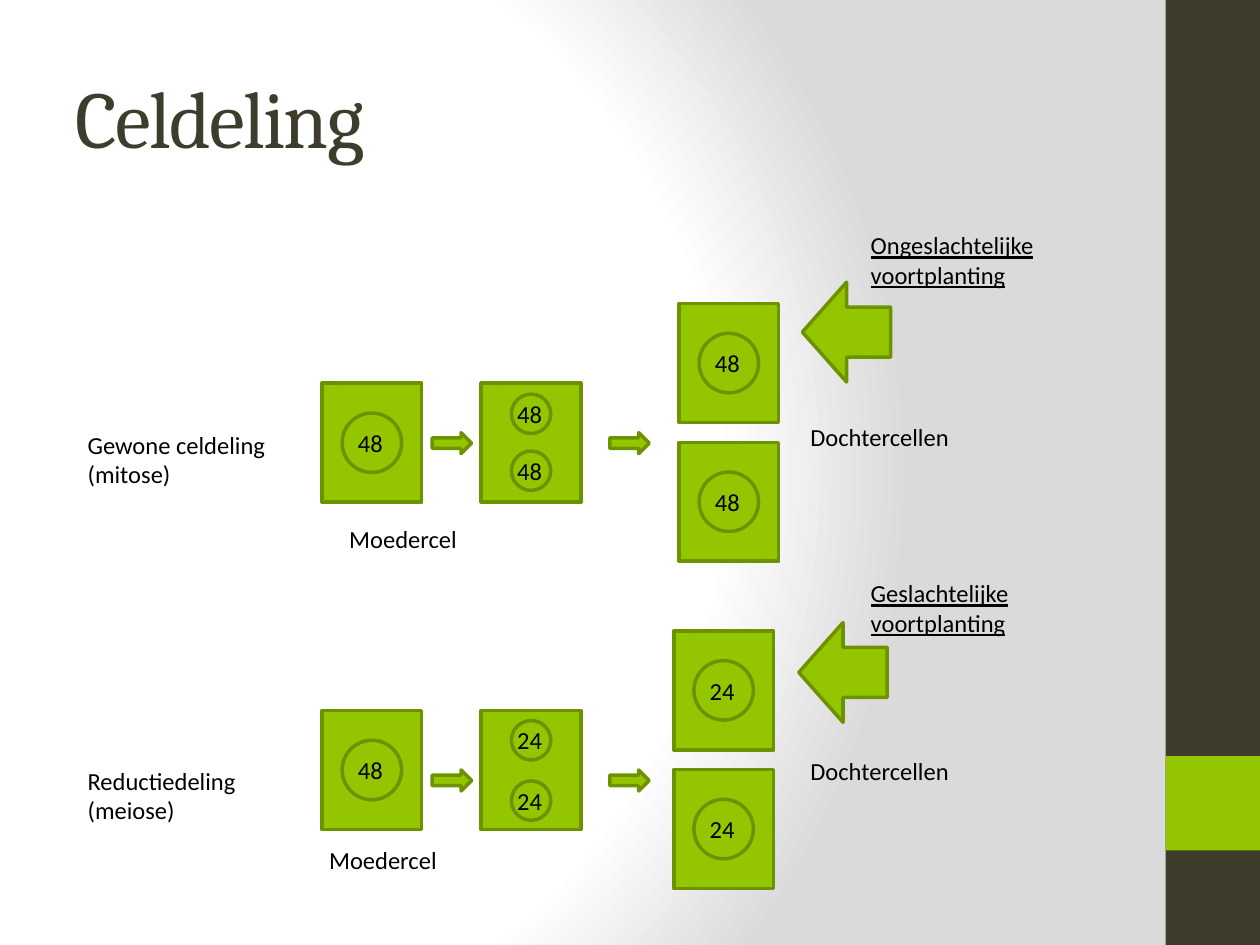
from lxml import etree
from pptx import Presentation
from pptx.dml.color import RGBColor
from pptx.enum.shapes import MSO_SHAPE
from pptx.enum.text import MSO_ANCHOR, MSO_AUTO_SIZE, PP_ALIGN
from pptx.oxml import parse_xml
from pptx.oxml.ns import nsdecls, qn
from pptx.util import Pt

RECTANGLE = MSO_SHAPE.RECTANGLE
OVAL = MSO_SHAPE.OVAL
RIGHT_ARROW = MSO_SHAPE.RIGHT_ARROW
LEFT_ARROW = MSO_SHAPE.LEFT_ARROW
MIDDLE = MSO_ANCHOR.MIDDLE
LEFT = PP_ALIGN.LEFT
FIT_TEXT = MSO_AUTO_SIZE.SHAPE_TO_FIT_TEXT

COLORS = {
    "white": "FFFFFF",
    "gray": "DADADA",
    "dark": "3E3D2D",
    "green": "94C600",
    "outline": "6D9200",
    "text": "000000",
}
CELL_WIDTH, CELL_HEIGHT = 57, 68
NUCLEUS, SMALL_NUCLEUS = 34, 22.5
DAUGHTER_TOPS = (-45.5, 33.75)


def color(name):
    return RGBColor.from_string(COLORS[name])


def add_block(slide, kind, left, top, width, height, fill="green", line="outline"):
    shape = slide.shapes.add_shape(kind, Pt(left), Pt(top), Pt(width), Pt(height))
    shape.shadow.inherit = False
    shape.fill.solid()
    shape.fill.fore_color.rgb = color(fill)
    if line:
        shape.line.color.rgb = color(line)
        shape.line.width = Pt(2)
    else:
        shape.line.fill.background()


def add_label(slide, lines, left, top, width, height=24.5, underline=None):
    box = slide.shapes.add_textbox(Pt(left), Pt(top), Pt(width), Pt(height))
    frame = box.text_frame
    frame.word_wrap = True
    frame.auto_size = FIT_TEXT
    paragraph = frame.paragraphs[0]
    for index, line in enumerate(lines):
        if index:
            paragraph.add_line_break()
        run = paragraph.add_run()
        run.text = line
        run.font.name = "Calibri"
        run.font.size = Pt(14)
        run.font.underline = underline
        run.font.color.rgb = color("text")


def add_nucleus(slide, center_x, center_y, size, count):
    add_block(slide, OVAL, center_x - size / 2, center_y - size / 2, size, size)
    add_label(slide, [count], center_x - 15, center_y - 12, 39)


def add_cell(slide, left, top, count, centers=(CELL_HEIGHT / 2,), size=NUCLEUS):
    add_block(slide, RECTANGLE, left, top, CELL_WIDTH, CELL_HEIGHT)
    for center in centers:
        add_nucleus(slide, left + CELL_WIDTH / 2, top + center, size, count)


def add_division(slide, left, top, division):
    count = division["count"]
    add_cell(slide, left + 141, top, "48")
    add_cell(slide, left + 232, top, count, division["nuclei"], SMALL_NUCLEUS)
    for offset in DAUGHTER_TOPS:
        add_cell(slide, left + division["daughter_left"], top + offset, count)
    for offset in (204, 305.5):
        add_block(slide, RIGHT_ARROW, left + offset, top + division["arrow_top"], 22.5, 12)

    add_label(slide, division["name"], left, top + division["name_top"], 124.5, 41)
    mother_left, mother_top = division["mother_label"]
    add_label(slide, ["Moedercel"], left + mother_left, top + mother_top, 88)
    add_label(slide, ["Dochtercellen"], left + 413, top + division["daughter_top"], 124.5)
    add_label(slide, [division["reproduction"]], left + 447.5,
              top + division["reproduction_top"], 124.5, 41, underline=True)
    pointer_left, pointer_top = division["pointer"]
    add_block(slide, LEFT_ARROW, left + pointer_left, top + pointer_top, 50.5, 57)


def add_background(slide):
    slide.background.fill.solid()
    properties = slide.element.find(".//" + qn("p:bgPr"))
    gradient = parse_xml(f'<a:gradFill {nsdecls("a")} rotWithShape="1"/>')
    stops = etree.SubElement(gradient, qn("a:gsLst"))
    for position, name in ((0, "white"), (75, "white"), (100, "gray")):
        stop = etree.SubElement(stops, qn("a:gs"), pos=str(position * 1000))
        etree.SubElement(stop, qn("a:srgbClr"), val=COLORS[name])
    circle = etree.SubElement(gradient, qn("a:path"), {"path": "circle"})
    etree.SubElement(circle, qn("a:fillToRect"), l="20000", t="50000", r="100000", b="50000")
    properties.replace(properties[0], gradient)


def add_side_band(slide, left, top, width, height):
    add_block(slide, RECTANGLE, left, top, width, height, "dark", None)
    add_block(slide, RECTANGLE, left, top + height * 0.8, width, width, "green", None)


def add_title(slide, left, top, width, height):
    title = slide.shapes.title
    title.left, title.top, title.width, title.height = Pt(left), Pt(top), Pt(width), Pt(height)
    title.text_frame.vertical_anchor = MIDDLE
    paragraph = title.text_frame.paragraphs[0]
    paragraph.alignment = LEFT
    run = paragraph.add_run()
    run.text = "Celdeling"
    run.font.name = "Cambria"
    run.font.size = Pt(46)
    run.font.color.rgb = color("dark")
    run.font._element.set("spc", "-100")


def main():
    mitosis = {
        "name": ["Gewone celdeling", "(mitose)"], "name_top": 23,
        "count": "48", "nuclei": (17.5, 50), "arrow_top": 28.25,
        "daughter_left": 345, "daughter_top": 18.75, "mother_label": (149.5, 77),
        "reproduction": "Ongeslachtelijke voortplanting", "reproduction_top": -91,
        "pointer": (415.5, -57.75),
    }
    meiosis = {
        "name": ["Reductiedeling", "(meiose)"], "name_top": 28,
        "count": "24", "nuclei": (17, 51.5), "arrow_top": 34,
        "daughter_left": 342, "daughter_top": 22.5, "mother_label": (138, 73.5),
        "reproduction": "Geslachtelijke voortplanting", "reproduction_top": -79,
        "pointer": (413.5, -50.25),
    }

    presentation = Presentation()
    presentation.slide_width, presentation.slide_height = Pt(720), Pt(540)
    slide = presentation.slides.add_slide(presentation.slide_layouts[5])
    add_background(slide)
    add_side_band(slide, 666, 0, 54, 540)
    add_title(slide, 36, 21.5, 600, 90)
    add_division(slide, 43, 219, mitosis)
    add_division(slide, 43, 406, meiosis)
    presentation.save("out.pptx")


if __name__ == "__main__":
    main()
